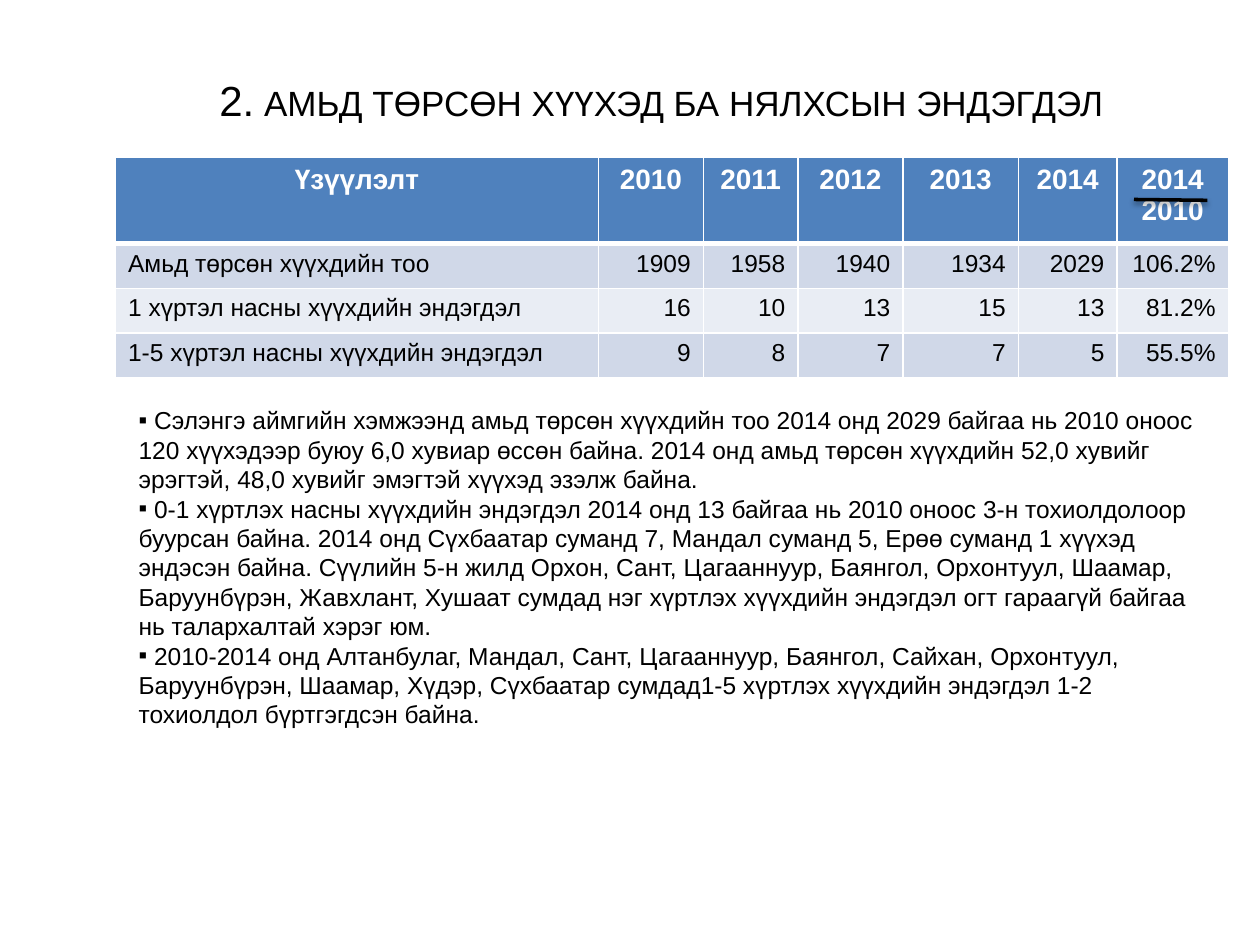
from lxml import etree
from pptx import Presentation
from pptx import util as u
from pptx.dml.color import RGBColor
from pptx.enum import shapes, text
from pptx.oxml import ns

COLORS = {"ink": "000000", "paper": "FFFFFF", "head": "4F81BD",
          "band": "D0D8E8", "light": "E9EDF4"}
ALIGN = text.PP_ALIGN

COLUMNS = [46, 10, 9, 10, 11, 9.4, 10.6]
ROWS = [8.2, 4.27, 4.27, 4.27]
TABLE = [
    ["Үзүүлэлт", "2010", "2011", "2012", "2013", "2014", "2014 2010"],
    ["Амьд төрсөн хүүхдийн тоо", "1909", "1958", "1940", "1934", "2029", "106.2%"],
    ["1 хүртэл насны хүүхдийн эндэгдэл", "16", "10", "13", "15", "13", "81.2%"],
    ["1-5 хүртэл насны хүүхдийн эндэгдэл", "9", "8", "7", "7", "5", "55.5%"],
]
FINDINGS = [
    " Сэлэнгэ аймгийн хэмжээнд амьд төрсөн хүүхдийн тоо 2014 онд 2029 байгаа нь "
    "2010 оноос 120 хүүхэдээр буюу 6,0 хувиар өссөн байна. 2014 онд амьд төрсөн "
    "хүүхдийн 52,0 хувийг эрэгтэй, 48,0 хувийг эмэгтэй хүүхэд эзэлж байна.",
    " 0-1 хүртлэх насны хүүхдийн эндэгдэл 2014 онд 13 байгаа нь 2010 оноос 3-н "
    "тохиолдолоор буурсан байна. 2014 онд Сүхбаатар суманд 7, Мандал суманд 5, "
    "Ерөө суманд 1 хүүхэд эндэсэн байна. Сүүлийн 5-н жилд Орхон, Сант, Цагааннуур, "
    "Баянгол, Орхонтуул, Шаамар, Баруунбүрэн, Жавхлант, Хушаат сумдад нэг хүртлэх "
    "хүүхдийн эндэгдэл огт гараагүй байгаа нь талархалтай хэрэг юм.",
    " 2010-2014 онд Алтанбулаг, Мандал, Сант, Цагааннуур, Баянгол, Сайхан, "
    "Орхонтуул, Баруунбүрэн, Шаамар, Хүдэр, Сүхбаатар сумдад1-5 хүртлэх хүүхдийн "
    "эндэгдэл 1-2 тохиолдол бүртгэгдсэн байна.",
]


def grid(*cells):
    """Turn grid units of a twelfth of an inch into lengths."""
    return [u.Inches(cell / 12) for cell in cells]


def add_xml(parent, tag, **attributes):
    return etree.SubElement(parent, ns.qn(tag), attributes)


class Page:
    """The current slide and its style."""
    font = "Arial"

    def __init__(self, deck):
        self.slide = deck.slides.add_slide(deck.slide_layouts[1])

    def add_span(self, para, words, size, color="ink", bold=False):
        span = para.add_run()
        span.text = words
        span.font.name, span.font.size, span.font.bold = self.font, u.Pt(size), bold
        span.font.color.rgb = RGBColor.from_string(COLORS[color])

    def place(self, box, cells):
        box.left, box.top, box.width, box.height = grid(*cells)

    def title(self, cells, spans):
        box = self.slide.shapes.title
        self.place(box, cells)
        box.text_frame.auto_size = text.MSO_AUTO_SIZE.NONE
        box.text_frame.vertical_anchor = text.MSO_ANCHOR.MIDDLE
        para = box.text_frame.paragraphs[0]
        para.alignment = ALIGN.CENTER
        for words, size in spans:
            self.add_span(para, words, size)

    def bullets(self, cells, items, size):
        box = self.slide.placeholders[1]
        self.place(box, cells)
        frame = box.text_frame
        frame.auto_size = text.MSO_AUTO_SIZE.SHAPE_TO_FIT_TEXT
        for index, item in enumerate(items):
            para = frame.add_paragraph() if index else frame.paragraphs[0]
            props = para._p.get_or_add_pPr()
            props.set("marL", "0")
            props.set("indent", "0")
            add_xml(props, "a:buFont", typeface=self.font)
            add_xml(props, "a:buChar", char="▪")
            para.space_before = u.Pt(0)
            self.add_span(para, item, size)

    def borders(self, cell, bottom):
        props = cell._tc.get_or_add_tcPr()
        for side, width in zip("LRTB", (1, 1, 1, bottom)):
            line = add_xml(props, f"a:ln{side}", w=str(u.Pt(width)))
            add_xml(add_xml(line, "a:solidFill"), "a:srgbClr", val=COLORS["paper"])

    def table(self, cells, columns, rows, values):
        frame = self.slide.shapes.add_table(len(rows), len(columns), *grid(*cells))
        table = frame.table
        for column, width in zip(table.columns, grid(*columns)):
            column.width = width
        for row, height in zip(table.rows, grid(*rows)):
            row.height = height
        for r, line in enumerate(values):
            fill = "head" if r == 0 else ("light", "band")[r % 2]
            for c, words in enumerate(line):
                cell = table.cell(r, c)
                self.borders(cell, 1 if r else 3)
                cell.fill.solid()
                cell.fill.fore_color.rgb = RGBColor.from_string(COLORS[fill])
                para = cell.text_frame.paragraphs[0]
                if r == 0:
                    para.alignment = ALIGN.CENTER
                    self.add_span(para, words, 16, "paper", True)
                else:
                    para.alignment = ALIGN.RIGHT if c else ALIGN.LEFT
                    self.add_span(para, words, 14)

    def shadowed_line(self, ends, width):
        line = self.slide.shapes.add_connector(
            shapes.MSO_CONNECTOR.STRAIGHT, *grid(*ends))
        line.line.width = u.Pt(width)
        line.line.color.rgb = RGBColor.from_string(COLORS["ink"])
        effects = add_xml(line._element.spPr, "a:effectLst")
        shadow = add_xml(effects, "a:outerShdw", blurRad=str(u.Pt(3.1)),
                         dist=str(u.Pt(1.6)), dir="5400000", rotWithShape="0")
        ink = add_xml(shadow, "a:srgbClr", val=COLORS["ink"])
        add_xml(ink, "a:alpha", val="38000")


def main():
    deck = Presentation()
    deck.slide_width, deck.slide_height = grid(120, 90)
    page = Page(deck)
    page.title((12, 6, 102, 7),
               [("2.", 24), (" АМЬД ТӨРСӨН ХҮҮХЭД БА НЯЛХСЫН ЭНДЭГДЭЛ", 20)])
    page.table((11, 15, sum(COLUMNS), sum(ROWS)), COLUMNS, ROWS, TABLE)
    page.bullets((12, 38, 105, 35.2), FINDINGS, 14)
    page.shadowed_line((108, 19, 115, 19.08), 2)
    deck.save("out.pptx")


if __name__ == "__main__":
    main()
